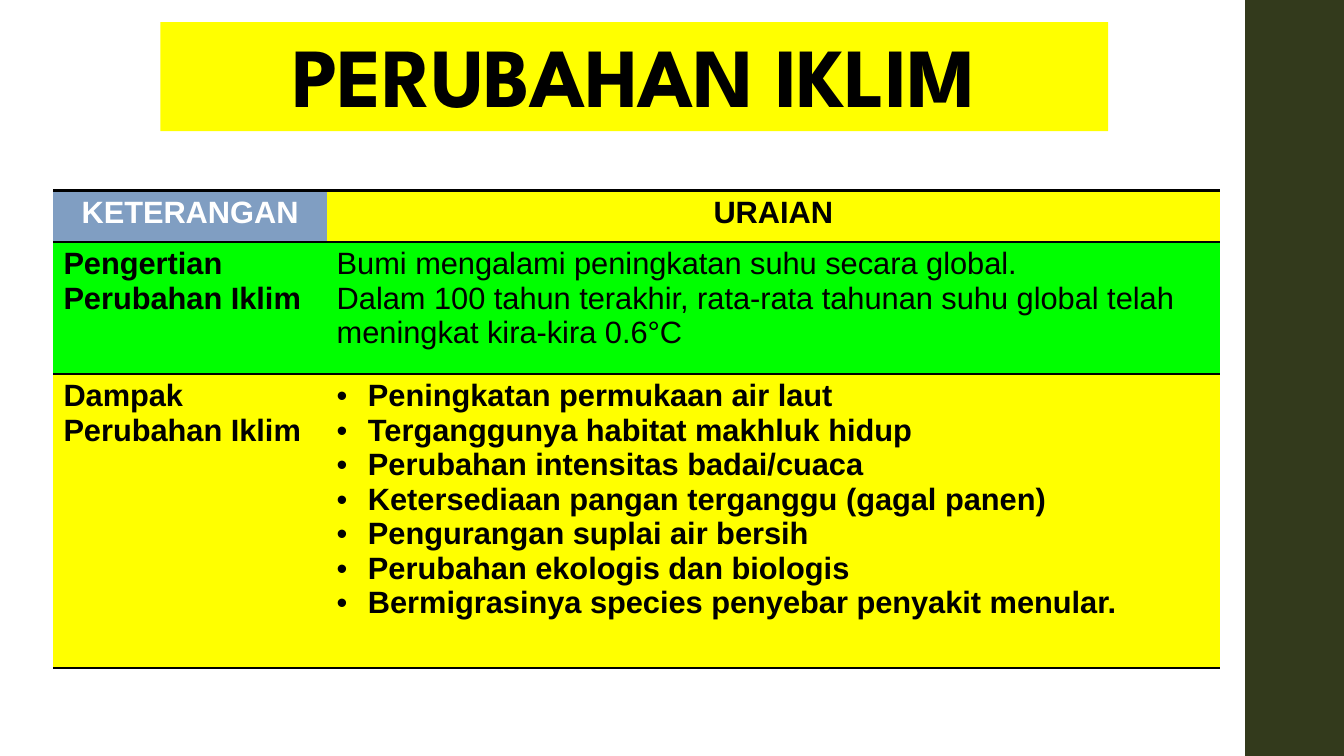
from dataclasses import dataclass

from lxml import etree
from pptx import Presentation
from pptx.dml.color import RGBColor
from pptx.enum.shapes import MSO_SHAPE
from pptx.enum.text import MSO_ANCHOR, MSO_AUTO_SIZE, PP_ALIGN
from pptx.oxml.ns import qn
from pptx.slide import Slide
from pptx.table import _Cell
from pptx.util import Inches, Pt

RECTANGLE = MSO_SHAPE.RECTANGLE
BOTTOM = MSO_ANCHOR.BOTTOM
NO_AUTOFIT = MSO_AUTO_SIZE.NONE
LEFT, CENTER = PP_ALIGN.LEFT, PP_ALIGN.CENTER

BLACK = RGBColor(0x00, 0x00, 0x00)
WHITE = RGBColor(0xFF, 0xFF, 0xFF)
YELLOW = RGBColor(0xFF, 0xFF, 0x00)
GREEN = RGBColor(0x00, 0xFF, 0x00)
BLUE = RGBColor(0x80, 0x9E, 0xC2)
OLIVE = RGBColor(0x33, 0x3A, 0x1C)

TITLE_FONT = "League Spartan"
TABLE_FONT = "Arial"
PLAIN_TABLE_STYLE = "{2D5ABB26-0587-4C30-8999-92F81FD0307C}"
COLUMN_WIDTHS = (2.71, 8.86)
ROW_HEIGHTS = (0.51, 1.31, 2.92)
BULLET_INDENT = Inches(0.31)
BORDER_WIDTH = Pt(2)


@dataclass(frozen=True)
class CellContent:
    lines: tuple[str, ...]
    fill: RGBColor
    color: RGBColor = BLACK
    bold: bool = True
    alignment: PP_ALIGN = LEFT
    bulleted: bool = False


IMPACTS = (
    "Peningkatan permukaan air laut",
    "Terganggunya habitat makhluk hidup",
    "Perubahan intensitas badai/cuaca",
    "Ketersediaan pangan terganggu (gagal panen)",
    "Pengurangan suplai air bersih",
    "Perubahan ekologis dan biologis",
    "Bermigrasinya species penyebar penyakit menular.",
)
DEFINITION = (
    "Bumi mengalami peningkatan suhu secara global.",
    "Dalam 100 tahun terakhir, rata-rata tahunan suhu global telah "
    "meningkat kira-kira 0.6°C",
)
ROWS = (
    (CellContent(("KETERANGAN",), BLUE, color=WHITE, alignment=CENTER),
     CellContent(("URAIAN",), YELLOW, alignment=CENTER)),
    (CellContent(("Pengertian Perubahan Iklim",), GREEN),
     CellContent(DEFINITION, GREEN, bold=False)),
    (CellContent(("Dampak Perubahan Iklim",), YELLOW),
     CellContent(IMPACTS, YELLOW, bulleted=True)),
)
# Black rules on each row
ROW_BORDERS = (("a:lnT", "a:lnB"), ("a:lnT",), ("a:lnB",))


def add_side_bar(slide: Slide) -> None:
    bar = slide.shapes.add_shape(
        RECTANGLE, Inches(12.35), 0, Inches(1), Inches(7.5))
    bar.shadow.inherit = False
    bar.fill.solid()
    bar.fill.fore_color.rgb = OLIVE
    bar.line.fill.background()


def format_title(slide: Slide) -> None:
    title = slide.shapes.title
    title.left, title.top = Inches(1.59), Inches(0.22)
    title.width, title.height = Inches(9.4), Inches(1.08)
    title.fill.solid()
    title.fill.fore_color.rgb = YELLOW
    frame = title.text_frame
    frame.text = "PERUBAHAN IKLIM"
    frame.auto_size = NO_AUTOFIT
    frame.vertical_anchor = BOTTOM
    paragraph = frame.paragraphs[0]
    paragraph.alignment = CENTER
    paragraph.line_spacing = 0.9
    font = paragraph.runs[0].font
    font.name, font.size, font.bold = TITLE_FONT, Pt(60), True
    font.color.rgb = BLACK
    paragraph.runs[0]._r.get_or_add_rPr().set("spc", "-50")


def add_border(cell: _Cell, side: str) -> None:
    properties = cell._tc.get_or_add_tcPr()
    line = etree.SubElement(properties, qn(side), w=str(BORDER_WIDTH))
    fill = etree.SubElement(line, qn("a:solidFill"))
    etree.SubElement(fill, qn("a:srgbClr"), val=str(BLACK))


def fill_cell(cell: _Cell, content: CellContent) -> None:
    cell.fill.solid()
    cell.fill.fore_color.rgb = content.fill
    cell.text_frame.text = "\n".join(content.lines)
    for paragraph in cell.text_frame.paragraphs:
        paragraph.alignment = content.alignment
        font = paragraph.runs[0].font
        font.name, font.size, font.bold = TABLE_FONT, Pt(22), content.bold
        font.color.rgb = content.color
        if content.bulleted:
            properties = paragraph._p.get_or_add_pPr()
            properties.set("marL", str(BULLET_INDENT))
            properties.set("indent", str(-BULLET_INDENT))
            etree.SubElement(properties, qn("a:buFont"), typeface=TABLE_FONT)
            etree.SubElement(properties, qn("a:buChar"), char="•")


def add_climate_table(slide: Slide) -> None:
    table = slide.shapes.add_table(
        len(ROWS), len(COLUMN_WIDTHS), Inches(0.53), Inches(1.89),
        Inches(sum(COLUMN_WIDTHS)), Inches(sum(ROW_HEIGHTS))).table
    table.first_row = table.horz_banding = False
    table._tbl.tblPr.find(qn("a:tableStyleId")).text = PLAIN_TABLE_STYLE
    for column, width in zip(table.columns, COLUMN_WIDTHS):
        column.width = Inches(width)
    for row, height, contents, borders in zip(
            table.rows, ROW_HEIGHTS, ROWS, ROW_BORDERS):
        row.height = Inches(height)
        for cell, content in zip(row.cells, contents):
            for side in borders:
                add_border(cell, side)
            fill_cell(cell, content)


def main() -> None:
    presentation = Presentation()
    presentation.slide_width = Inches(13.33)
    presentation.slide_height = Inches(7.5)
    title_only = presentation.slide_layouts[5]
    slide = presentation.slides.add_slide(title_only)
    add_side_bar(slide)
    format_title(slide)
    add_climate_table(slide)
    presentation.save("out.pptx")


if __name__ == "__main__":
    main()
